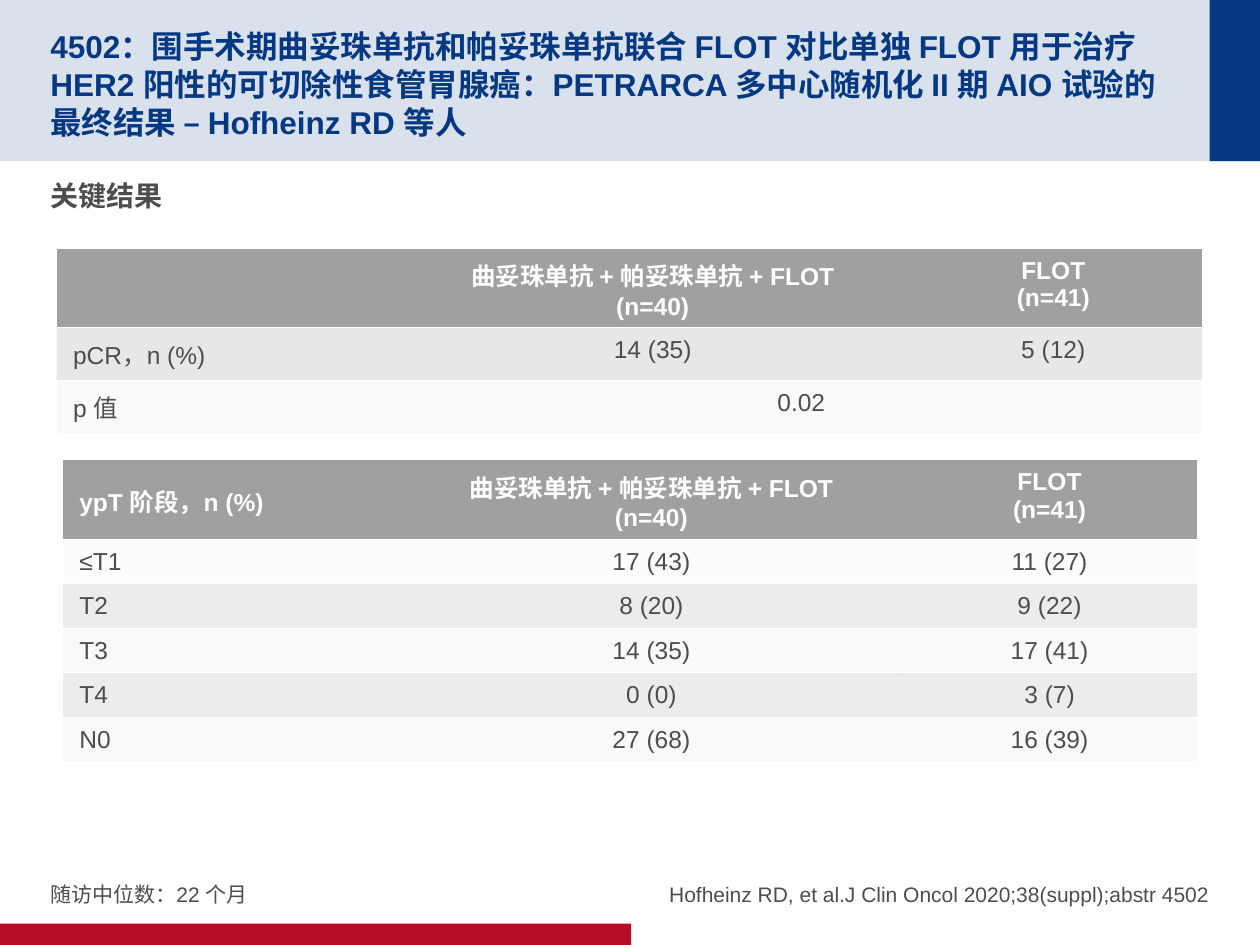
from lxml import etree
from pptx import Presentation
from pptx.dml.color import RGBColor
from pptx.enum.shapes import MSO_SHAPE
from pptx.enum.text import MSO_ANCHOR, PP_ALIGN
from pptx.oxml.ns import qn
from pptx.util import Inches, Pt

RECTANGLE = MSO_SHAPE.RECTANGLE
TOP, MIDDLE, BOTTOM = MSO_ANCHOR.TOP, MSO_ANCHOR.MIDDLE, MSO_ANCHOR.BOTTOM
LEFT, CENTER, RIGHT = PP_ALIGN.LEFT, PP_ALIGN.CENTER, PP_ALIGN.RIGHT

FONT = "Arial"
NO_TABLE_STYLE = "{2D5ABB26-0587-4C30-8999-92F81FD0307C}"
COLORS = {
    "navy": "043882",
    "red": "B60D27",
    "text": "4D4D4D",
    "white": "FFFFFF",
    "header": "A0A0A0",
    "light": "EAEAEA",
}
# Row fills: colour name and opacity in percent
HEADER = ("header", 100)
GREY = ("header", 25)
DARK = ("text", 10)
PALE = ("light", 25)
PALEST = ("light", 10)

ARM_HEADERS = ["曲妥珠单抗 + 帕妥珠单抗 + FLOT\n(n=40)", "FLOT\n(n=41)"]
RESPONSE_ROWS = [
    ["", *ARM_HEADERS],
    ["pCR，n (%)", "14 (35)", "5 (12)"],
    ["p 值", "0.02", ""],
]
STAGE_ROWS = [
    ["ypT 阶段，n (%)", *ARM_HEADERS],
    ["≤T1", "17 (43)", "11 (27)"],
    ["T2", "8 (20)", "9 (22)"],
    ["T3", "14 (35)", "17 (41)"],
    ["T4", "0 (0)", "3 (7)"],
    ["N0", "27 (68)", "16 (39)"],
]


def set_fill(fill, element, color, opacity=100):
    """Fill with a colour; element is the XML parent of the fill."""
    fill.solid()
    fill.fore_color.rgb = RGBColor.from_string(COLORS[color])
    if opacity < 100:
        node = element.find(qn("a:solidFill") + "/" + qn("a:srgbClr"))
        etree.SubElement(node, qn("a:alpha"), val=str(opacity * 1000))


def format_text(text_frame, size, color, bold=False, align=LEFT):
    for paragraph in text_frame.paragraphs:
        paragraph.alignment = align
        for run in paragraph.runs:
            run.font.name = FONT
            run.font.size = Pt(size)
            run.font.bold = bold
            run.font.color.rgb = RGBColor.from_string(COLORS[color])


def add_bar(slide, box, color, opacity=100):
    shape = slide.shapes.add_shape(RECTANGLE, *map(Inches, box))
    shape.shadow.inherit = False
    shape.line.fill.background()
    set_fill(shape.fill, shape.element.spPr, color, opacity)


def add_text(slide, box, text, size, color, bold=False, align=LEFT,
             anchor=TOP, insets=(0, 0), space_after=4):
    """Insets are the top and bottom margins in inches."""
    text_frame = slide.shapes.add_textbox(*map(Inches, box)).text_frame
    text_frame.word_wrap = True
    text_frame.vertical_anchor = anchor
    text_frame.margin_left = text_frame.margin_right = 0
    text_frame.margin_top, text_frame.margin_bottom = map(Inches, insets)
    text_frame.text = text
    format_text(text_frame, size, color, bold, align)
    for paragraph in text_frame.paragraphs:
        paragraph.space_after = Pt(space_after)


def add_cell_border(cell, side, width):
    line = etree.SubElement(cell._tc.get_or_add_tcPr(), qn("a:" + side),
                            w=str(Pt(width)))
    solid = etree.SubElement(line, qn("a:solidFill"))
    etree.SubElement(solid, qn("a:srgbClr"), val=COLORS["white"])


def add_result_table(slide, left, top, columns, heights, rows, fills):
    frame = slide.shapes.add_table(
        len(rows), len(columns), Inches(left), Inches(top),
        Inches(sum(columns)), Inches(sum(heights)))
    table = frame.table
    table.horz_banding = False
    frame.element.find(".//" + qn("a:tableStyleId")).text = NO_TABLE_STYLE
    for column, width in zip(table.columns, columns):
        column.width = Inches(width)
    for index, (values, height, fill) in enumerate(zip(rows, heights, fills)):
        table.rows[index].height = Inches(height)
        is_header = index == 0
        for position, value in enumerate(values):
            cell = table.cell(index, position)
            cell.margin_left = cell.margin_right = Inches(0.13)
            cell.margin_top, cell.margin_bottom = Inches(0.07), Inches(0.05)
            if value:
                cell.text = value
            format_text(cell.text_frame, 14, "white" if is_header else "text",
                        is_header, CENTER if position else LEFT)
            add_cell_border(cell, "lnT", 1 if index == 1 else 0.75)
            add_cell_border(cell, "lnB", 1 if is_header else 0.75)
            set_fill(cell.fill, cell._tc.tcPr, *fill)
    table.cell(0, 0).vertical_anchor = MIDDLE
    return table


def add_header(slide, width, height):
    accent = 0.4
    add_bar(slide, (0, 0, width, height), "navy", 15)
    add_bar(slide, (width - accent, 0, accent, height), "navy")
    add_text(slide, (0.4, 0.2, 9.01, height - 0.4),
             "4502：围手术期曲妥珠单抗和帕妥珠单抗联合 FLOT 对比单独 FLOT 用于治疗 "
             "HER2 阳性的可切除性食管胃腺癌：PETRARCA 多中心随机化 II 期 AIO "
             "试验的最终结果 – Hofheinz RD 等人",
             18, "navy", bold=True, anchor=MIDDLE, insets=(0.05, 0),
             space_after=0)


def add_results(slide, left, top, width, height):
    add_text(slide, (left, top, width, height), "关键结果", 16, "text",
             bold=True, insets=(0.05, 0.05))
    add_result_table(slide, left + 0.1, top + 2.28, [2.68, 3.98, 2.34],
                     [0.63] + [0.35] * 5, STAGE_ROWS,
                     [HEADER, PALEST, DARK, PALE, DARK, PALE])
    response = add_result_table(slide, left + 0.05, top + 0.6,
                                [2.73, 4, 2.36], [0.63, 0.42, 0.42],
                                RESPONSE_ROWS, [HEADER, GREY, PALE])
    response.cell(2, 1).merge(response.cell(2, 2))


def add_footer(slide, left, top, width, height):
    note_width = 4.52
    notes = [
        (left, "随访中位数：22 个月", LEFT),
        (left + width - note_width,
         "Hofheinz RD, et al.J Clin Oncol 2020;38(suppl);abstr 4502", RIGHT),
    ]
    for note_left, text, align in notes:
        add_text(slide, (note_left, top, note_width, height), text, 12, "text",
                 align=align, anchor=BOTTOM)
    add_bar(slide, (0, 7.33, 5.01, 0.17), "red")


def main():
    presentation = Presentation()
    presentation.slide_width = Inches(10)
    presentation.slide_height = Inches(7.5)
    slide = presentation.slides.add_slide(presentation.slide_layouts[6])
    add_header(slide, 10, 1.28)
    add_results(slide, 0.4, 1.37, 9.2, 5.19)
    add_footer(slide, 0.4, 6.67, 9.2, 0.53)
    presentation.save("out.pptx")


if __name__ == "__main__":
    main()
